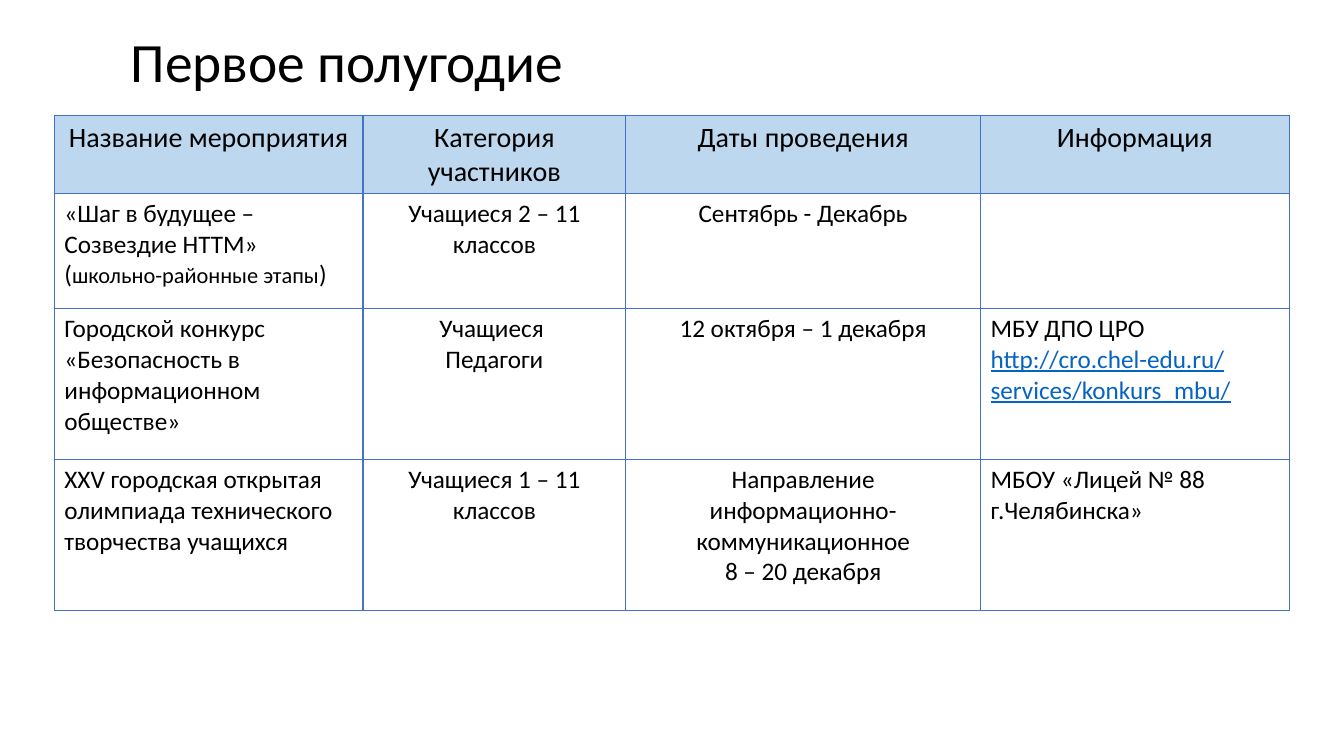
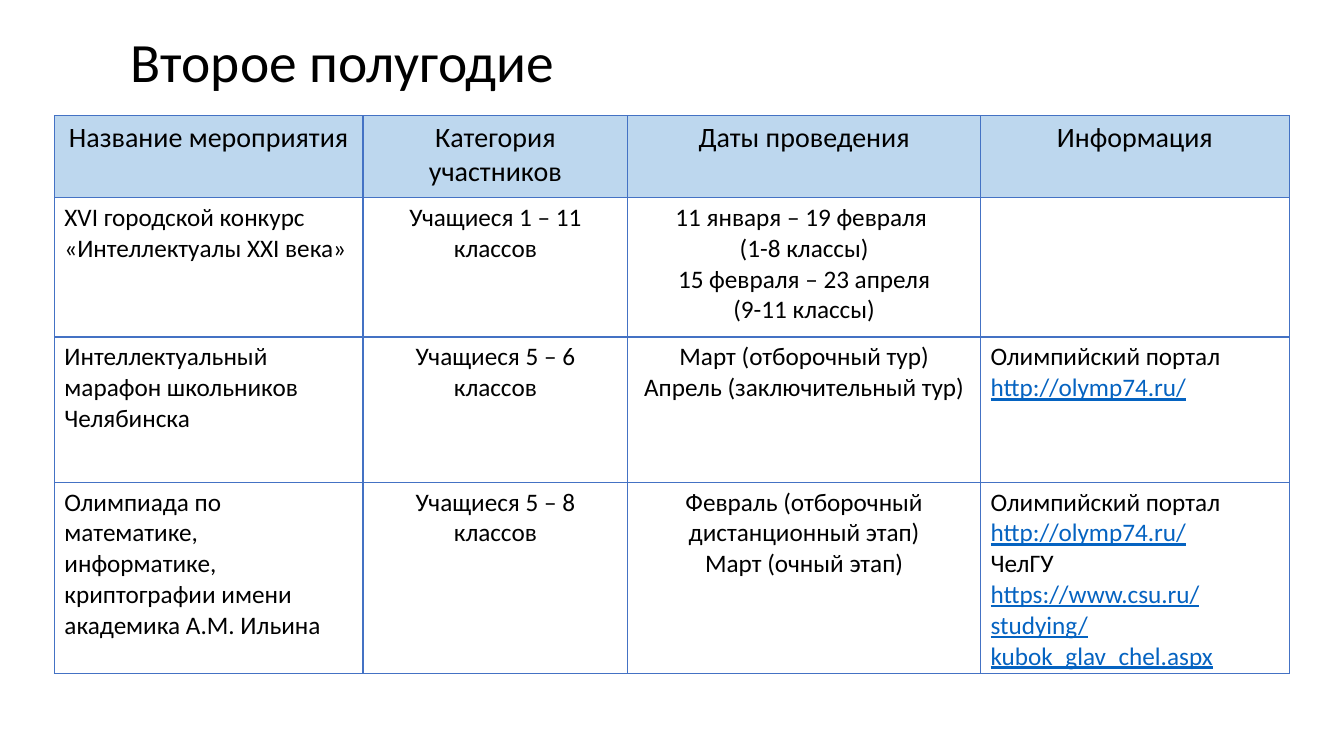
from lxml import etree
from pptx import Presentation
from pptx import util as u
from pptx.dml.color import RGBColor
from pptx.enum import text
from pptx.oxml.ns import qn

FONT = "Calibri"
COLORS = {"ink": "000000", "link": "0563C1", "head": "BDD7EE",
          "body": "FFFFFF", "line": "4472C4"}
HEAD_SIZE, BODY_SIZE, NOTE_SIZE = 20, 18, 16
LEFT, TOP = 1.37, 2.92
CENTRED = (1, 2)  # columns whose body text is centred

# A cell is a list of paragraphs; a paragraph is a string or a list of
# (text, size) runs.
HEADS = [["Название мероприятия"], ["Категория участников"],
         ["Даты проведения"], ["Информация"]]

SLIDES = [
    {
        "title": "Первое полугодие",
        "cols": (7.78, 6.62, 8.94, 7.78),
        "rows": (1.27, 2.91, 3.8, 3.8),
        "body": [
            [[[("«Шаг в будущее – Созвездие HTTM» \n(", BODY_SIZE),
               ("школьно-районные этапы", NOTE_SIZE),
               (")", BODY_SIZE)]],
             ["Учащиеся 2 – 11 классов"],
             ["Сентябрь - Декабрь"],
             []],
            [["Городской конкурс «Безопасность в информационном обществе»"],
             ["Учащиеся ", "Педагоги"],
             ["12 октября – 1 декабря"],
             ["МБУ ДПО ЦРО",
              "http://cro.chel-edu.ru/services/konkurs_mbu/"]],
            [["XXV городская открытая олимпиада технического творчества "
              "учащихся"],
             ["Учащиеся 1 – 11 классов"],
             ["Направление информационно- коммуникационное",
              "8 – 20 декабря"],
             ["МБОУ «Лицей № 88 г.Челябинска»"]],
        ],
    },
    {
        "title": "Второе полугодие",
        "cols": (7.78, 6.67, 8.89, 7.78),
        "rows": (2.06, 3.51, 3.66, 4.45),
        "body": [
            [["XVI городской конкурс «Интеллектуалы XXI века»"],
             ["Учащиеся 1 – 11 классов"],
             ["11 января – 19 февраля \n(1-8 классы)",
              "15 февраля – 23 апреля\n(9-11 классы)"],
             []],
            [["Интеллектуальный марафон школьников Челябинска"],
             ["Учащиеся 5 – 6 классов"],
             ["Март (отборочный тур)", "Апрель (заключительный тур)"],
             ["Олимпийский портал", "http://olymp74.ru/"]],
            [["Олимпиада по математике, информатике, криптографии имени "
              "академика А.М. Ильина"],
             ["Учащиеся 5 – 8 классов"],
             ["Февраль (отборочный дистанционный этап)",
              "Март (очный этап)"],
             ["Олимпийский портал", "http://olymp74.ru/", "ЧелГУ",
              "https://www.csu.ru/studying/kubok_glav_chel.aspx"]],
        ],
    },
]


def color(name):
    return RGBColor.from_string(COLORS[name])


def add_text(para, words, size):
    """Add a run, with line breaks at newlines; web addresses look like links."""
    link = words.startswith("http")
    for i, part in enumerate(words.split("\n")):
        if i:
            para.add_line_break()
        run = para.add_run()
        run.text = part
        font = run.font
        font.name, font.size = FONT, u.Pt(size)
        font.color.rgb = color("link" if link else "ink")
        if link:
            font.underline = True


def add_title(slide, words):
    box = slide.shapes.add_textbox(u.Cm(3.05), u.Cm(0.79),
                                   u.Cm(27.94), u.Cm(1.65))
    frame = box.text_frame
    frame.word_wrap = True
    frame.vertical_anchor = text.MSO_ANCHOR.MIDDLE
    para = frame.paragraphs[0]
    para.line_spacing = 0.9
    add_text(para, words, 39.6)


def add_borders(cell):
    props = cell._tc.get_or_add_tcPr()
    for side in ("lnL", "lnR", "lnT", "lnB"):
        line = etree.SubElement(props, qn("a:" + side), w=str(u.Pt(1)))
        fill = etree.SubElement(line, qn("a:solidFill"))
        etree.SubElement(fill, qn("a:srgbClr"), val=COLORS["line"])


def fill_cell(cell, paras, head, centred):
    add_borders(cell)
    cell.fill.solid()
    cell.fill.fore_color.rgb = color("head" if head else "body")
    size = HEAD_SIZE if head else BODY_SIZE
    frame = cell.text_frame
    for i, runs in enumerate(paras):
        para = frame.add_paragraph() if i else frame.paragraphs[0]
        if centred:
            para.alignment = text.PP_ALIGN.CENTER
        if isinstance(runs, str):
            runs = [(runs, size)]
        for words, points in runs:
            add_text(para, words, points)


def add_grid(slide, cols, rows, body):
    table = slide.shapes.add_table(
        len(rows), len(cols), u.Cm(LEFT), u.Cm(TOP),
        u.Cm(sum(cols)), u.Cm(sum(rows))).table
    table.first_row = table.horz_banding = False
    for col, width in zip(table.columns, cols):
        col.width = u.Cm(width)
    for row, height in zip(table.rows, rows):
        row.height = u.Cm(height)
    for r, cells in enumerate([HEADS] + body):
        for c, paras in enumerate(cells):
            fill_cell(table.cell(r, c), paras, r == 0,
                      r == 0 or c in CENTRED)


def main():
    deck = Presentation()
    deck.slide_width, deck.slide_height = u.Cm(33.87), u.Cm(19.05)
    for item in SLIDES:
        slide = deck.slides.add_slide(deck.slide_layouts[6])
        add_title(slide, item["title"])
        add_grid(slide, item["cols"], item["rows"], item["body"])
    deck.save("out.pptx")


if __name__ == "__main__":
    main()
